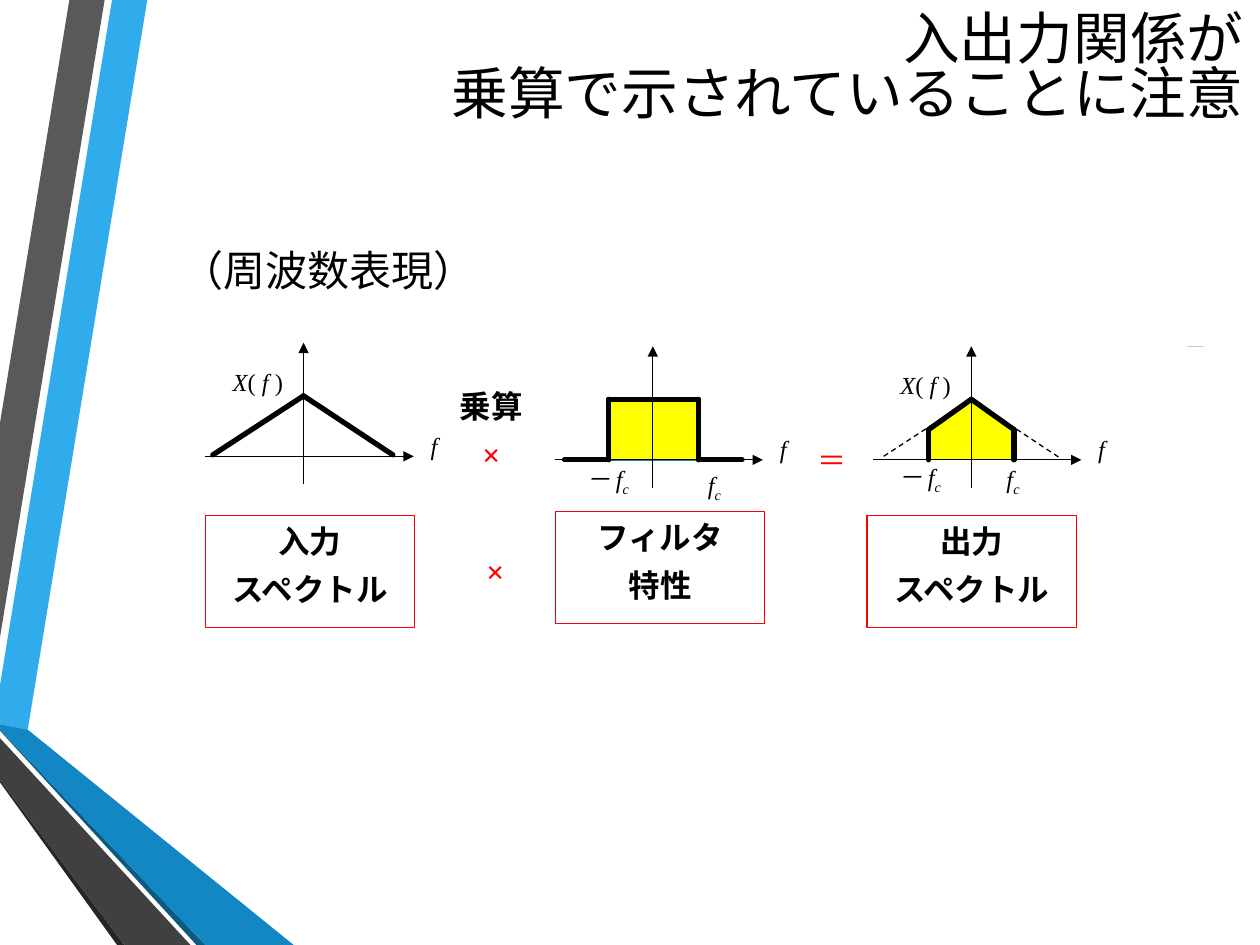
from pptx import Presentation
from pptx.dml.color import RGBColor
from pptx.enum.dml import MSO_LINE
from pptx.enum.shapes import MSO_CONNECTOR, MSO_SHAPE
from pptx.enum.text import MSO_ANCHOR, MSO_AUTO_SIZE, PP_ALIGN
from pptx.oxml.ns import qn
from pptx.util import Cm, Pt
from lxml.etree import SubElement

SERIF, CJK = "Times New Roman", "Noto Sans CJK JP"
BLACK, RED, YELLOW = "000000", "FF0000", "FFFF00"
BAND = [
    ("30ACEC", [(0, 13.82), (0, 14.6), (0.56, 14.71), (2.97, 0), (2.26, 0)]),
    ("595959", [(2.11, 0), (1.4, 0), (0, 8.53), (0, 12.85)]),
    ("262626", [(0, 15.72), (0, 15.77), (2.36, 19.05), (2.51, 19.05)]),
    ("0C5A82", [(0, 14.71), (0, 14.73), (3.96, 19.05), (4.14, 19.05)]),
    ("1287C3", [(0, 14.71), (4.14, 19.05), (5.92, 19.05), (0.56, 14.71), (0, 14.6)]),
    ("404040", [(0, 15.72), (2.51, 19.05), (3.84, 19.05), (0, 14.88)]),
]
AXIS_X, PEAK, FEET = 1.98, -1.22, (0.15, 3.78)


def rgb(value):
    return RGBColor.from_string(value)


def style_run(r, size, color=BLACK, font=SERIF, bold=False, italic=False):
    r.font.size, r.font.name = Pt(size), font
    r.font.bold, r.font.italic = bold, italic
    r.font.color.rgb = rgb(color)
    SubElement(r._r.get_or_add_rPr(), qn("a:ea")).set("typeface", CJK)


def style_paragraph(p, align=PP_ALIGN.LEFT):
    p.alignment = align
    p.space_before, p.space_after = Pt(0), Pt(6)


def add_polygon(s, points, fill):
    builder = s.shapes.build_freeform(Cm(points[0][0]), Cm(points[0][1]), scale=1.0)
    builder.add_line_segments([(Cm(x), Cm(y)) for x, y in points[1:]], close=True)
    sp = builder.convert_to_shape()
    sp.shadow.inherit = False
    sp.fill.solid()
    sp.fill.fore_color.rgb = rgb(fill)
    sp.line.fill.background()


def add_line(s, start, end, width=0.75, color=BLACK, arrow=False, dash=False):
    cx = s.shapes.add_connector(MSO_CONNECTOR.STRAIGHT, *(Cm(v) for v in start + end))
    cx.line.width = Pt(width)
    cx.line.color.rgb = rgb(color)
    if dash:
        cx.line.dash_style = MSO_LINE.DASH
    ln = cx.line._get_or_add_ln()
    if width > 2:
        ln.set("cap", "rnd")
    if arrow:
        SubElement(ln, qn("a:tailEnd")).set("type", "triangle")
    SubElement(cx._element.spPr, qn("a:effectLst"))


def add_text(s, left, top, width, height, lines, size, font=SERIF, bold=True):
    tf = s.shapes.add_textbox(Cm(left), Cm(top), Cm(width), Cm(height)).text_frame
    tf.word_wrap = True
    for i, (text, color) in enumerate(lines):
        p = tf.add_paragraph() if i else tf.paragraphs[0]
        p.text = text
        style_paragraph(p, PP_ALIGN.CENTER)
        style_run(p.runs[0], size, color, font, bold)


def add_symbol(s, left, top, width, *parts):
    tf = s.shapes.add_textbox(Cm(left), Cm(top), Cm(width), Cm(0.99)).text_frame
    tf.word_wrap = True
    tf.margin_right = 0
    p = tf.paragraphs[0]
    style_paragraph(p)
    for text, kind in parts:
        r = p.add_run()
        r.text = text
        style_run(r, 14, italic=kind != "upright")
        if kind == "sub":
            r._r.get_or_add_rPr().set("baseline", "-25000")


def add_cutoffs(s, left, top, negative, positive):
    for (dx, dy), width, text in ((positive, 1.37, "f"), (negative, 1.7, "－ f")):
        add_symbol(s, left + dx, top + dy, width, (text, "italic"), ("c", "sub"))


def add_axes(s, left, top):
    add_line(s, (left, top), (left + 4.2, top), arrow=True)
    add_line(s, (left + AXIS_X, top + 0.56), (left + AXIS_X, top - 2.29), arrow=True)
    add_symbol(s, left + 4.29, top - 0.64, 0.48, ("f", "italic"))


def add_triangle(s, left, top, **line):
    for foot in FEET:
        add_line(s, (left + AXIS_X, top + PEAK), (left + foot, top - 0.03), **line)
    add_symbol(s, left + 0.3, top - 1.93, 1.75, ("X", "italic"), ("( ", "upright"),
               ("f ", "italic"), (")", "upright"))


def input_plot(s, left, top):
    add_axes(s, left, top)
    add_triangle(s, left, top, width=3)


def filter_plot(s, left, top):
    edges = [left + 1.09, left + 2.9]
    high = top + PEAK
    sp = s.shapes.add_shape(MSO_SHAPE.RECTANGLE, Cm(edges[0]), Cm(high),
                            Cm(edges[1] - edges[0]), Cm(-PEAK))
    sp.shadow.inherit = False
    sp.fill.solid()
    sp.fill.fore_color.rgb = rgb(YELLOW)
    sp.line.color.rgb = rgb("247FAF")
    sp.line.width = Pt(1.25)
    add_axes(s, left, top)
    add_line(s, (edges[0], high), (edges[1], high), 3)
    for edge, foot in zip(edges, (0.2, 3.78)):
        add_line(s, (edge, high), (edge, top), 3)
        add_line(s, (edge, top), (left + foot, top), 3)
    add_cutoffs(s, left, top, (0.38, -0.05), (2.84, 0.08))


def output_plot(s, left, top):
    mid, high, shoulder = left + AXIS_X, top + PEAK, top - 0.61
    edges = [left + 1.12, left + 2.84]
    for edge in edges:
        add_polygon(s, [(mid, top), (edge, top), (edge, shoulder), (mid, high)], YELLOW)
    add_axes(s, left, top)
    add_triangle(s, left, top, dash=True)
    for edge in edges:
        add_line(s, (edge, top), (edge, shoulder), 3)
        add_line(s, (edge, shoulder), (mid, high), 3)
    add_cutoffs(s, left, top, (0.25, -0.08), (2.44, -0.05))


def caption_box(s, left, top, lines):
    sp = s.shapes.add_shape(MSO_SHAPE.RECTANGLE, Cm(left), Cm(top), Cm(4.22), Cm(2.26))
    sp.shadow.inherit = False
    sp.fill.background()
    sp.line.color.rgb = rgb(RED)
    sp.line.width = Pt(0.75)
    tf = sp.text_frame
    tf.vertical_anchor = MSO_ANCHOR.TOP
    tf.text = "\n".join(lines)
    for p in tf.paragraphs:
        style_paragraph(p, PP_ALIGN.CENTER)
        style_run(p.runs[0], 18, bold=True)


def fill_placeholder(sp, box, text, size, font, anchor, align):
    sp.left, sp.top, sp.width, sp.height = (Cm(v) for v in box)
    tf = sp.text_frame
    tf.text = text
    tf.auto_size, tf.vertical_anchor = MSO_AUTO_SIZE.NONE, anchor
    p = tf.paragraphs[0]
    style_paragraph(p, align)
    for r in p.runs:
        style_run(r, size, font=font)
    return p


def headings(s):
    title = fill_placeholder(s.shapes.title, (4.7, 0, 20.62, 2.84),
                             "入出力関係が\v乗算で示されていることに注意", 32.4, "Calibri",
                             MSO_ANCHOR.MIDDLE, PP_ALIGN.RIGHT)
    title.line_spacing, title.space_after = 0.81, Pt(0)
    body = fill_placeholder(s.placeholders[1], (3.4, 4.8, 7.04, 1.24),
                            "（周波数表現）", 24, SERIF, MSO_ANCHOR.TOP, PP_ALIGN.LEFT)
    pPr = body._p.get_or_add_pPr()
    pPr.set("marL", "0")
    pPr.set("indent", "0")
    SubElement(pPr, qn("a:buNone"))


def operators(s):
    add_text(s, 8.38, 7.67, 3.05, 2.57, [("乗算", BLACK), ("×", RED)], 18)
    add_text(s, 8.46, 11, 3.05, 0.99, [("×", RED)], 18)
    add_text(s, 15.24, 8.79, 3.05, 0.91, [("＝", RED)], 16.6, CJK, False)


def main():
    prs = Presentation()
    prs.slide_width, prs.slide_height = Cm(25.4), Cm(19.05)
    s = prs.slides.add_slide(prs.slide_layouts[1])
    for fill, points in BAND:
        add_polygon(s, points, fill)
    headings(s)
    add_line(s, (23.93, 6.98), (24.28, 6.98), color="AED2F4")
    input_plot(s, 4.14, 9.2)
    filter_plot(s, 11.18, 9.27)
    output_plot(s, 17.6, 9.27)
    operators(s)
    caption_box(s, 4.14, 10.39, ["入力", "スペクトル"])
    caption_box(s, 11.2, 10.31, ["フィルタ", "特性"])
    caption_box(s, 17.48, 10.39, ["出力", "スペクトル"])
    prs.save("out.pptx")


if __name__ == "__main__":
    main()
